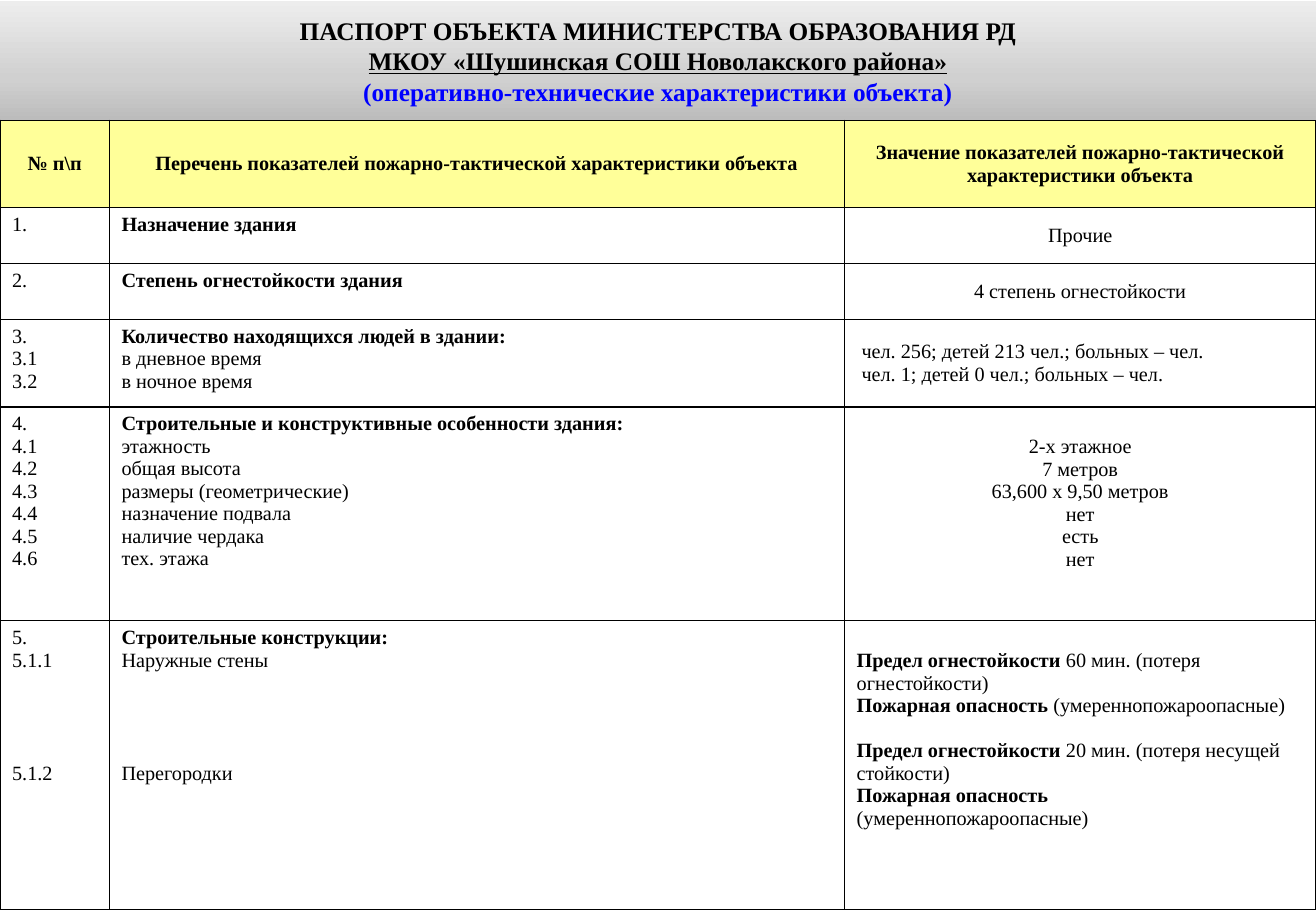
import copy

import pptx
import pptx.dml.color
import pptx.enum.shapes
import pptx.enum.text
import pptx.oxml
import pptx.oxml.ns
import pptx.util
from pptx.util import Inches

COLORS = {
    "black": "000000",
    "white": "FFFFFF",
    "blue": "0000FF",
    "header": "FFFF99",
}
BANNER_STOPS = [(0, "BCBCBC"), (0.35, "D0D0D0"), (1, "EDEDED")]
FONT = "Times New Roman"
LINE = 13.4
COLUMN_WIDTHS = [0.9, 6.05, 3.88]
ROW_HEIGHTS = [0.72, 0.46, 0.46, 0.72, 1.76, 2.38]
CENTER = pptx.enum.text.PP_ALIGN.CENTER
LEFT = pptx.enum.text.PP_ALIGN.LEFT
MIDDLE = pptx.enum.text.MSO_ANCHOR.MIDDLE
TOP = pptx.enum.text.MSO_ANCHOR.TOP

HEADERS = [
    r"*№ п\п*",
    "*Перечень показателей пожарно-тактической характеристики объекта*",
    "*Значение показателей пожарно-тактической характеристики объекта*",
]
NUMBERS = [
    ["1."],
    ["2."],
    ["3.", "3.1", "3.2"],
    ["4.", "4.1", "4.2", "4.3", "4.4", "4.5", "4.6"],
    ["5.", "5.1.1", "5.1.2"],
]
INDICATORS = [
    ["*Назначение здания*"],
    ["*Степень огнестойкости здания*"],
    ["*Количество находящихся людей в здании:*", "в дневное время", "в ночное время"],
    ["*Строительные и конструктивные особенности здания:*", "этажность",
     "общая высота", "размеры (геометрические)", "назначение подвала",
     "наличие чердака", "тех. этажа"],
    ["*Строительные конструкции:*", "Наружные стены", "Перегородки"],
]
VALUES = [
    ["Прочие"],
    ["4 степень огнестойкости"],
    ["чел. 256; детей 213 чел.; больных – чел.",
     "чел. 1; детей 0 чел.; больных – чел."],
    ["2-х этажное", "7 метров", "63,600 х 9,50 метров", "нет", "есть", "нет"],
    ["*Предел огнестойкости* 60 мин. (потеря огнестойкости)",
     "*Пожарная опасность* (умереннопожароопасные)",
     "*Предел огнестойкости* 20 мин. (потеря несущей стойкости)",
     "*Пожарная опасность*",
     "(умереннопожароопасные)"],
]
VALUE_FORMATS = [
    {"align": CENTER, "anchor": MIDDLE},
    {"align": CENTER, "anchor": MIDDLE},
    {"anchor": MIDDLE, "left": 0.14},
    {"align": CENTER, "top": 0.24},
    {"top": 0.24, "gaps": {2: 1}},
]


def rgb(value):
    return pptx.dml.color.RGBColor.from_string(value)


def add_paragraph(frame, text, size=12, color="black", align=LEFT,
                  underline=False, lines_before=0):
    para = frame.paragraphs[0] if not frame.text else frame.add_paragraph()
    para.alignment = align
    if lines_before:
        para.space_before = pptx.util.Pt(lines_before * LINE)
    for index, part in enumerate(text.split("*")):
        if part:
            span = para.add_run()
            span.text = part
            span.font.name = FONT
            span.font.size = pptx.util.Pt(size)
            span.font.bold = index % 2 == 1
            span.font.underline = underline
            span.font.color.rgb = rgb(COLORS[color])


def add_banner(page):
    box = page.shapes.add_shape(pptx.enum.shapes.MSO_SHAPE.RECTANGLE,
                                0, Inches(0.01), Inches(10.83), Inches(0.98))
    box.shadow.inherit = False
    box.line.fill.background()
    box.fill.gradient()
    box.fill.gradient_angle = 90
    stop_list = box.element.spPr.find(".//" + pptx.oxml.ns.qn("a:gsLst"))
    stop_list.append(copy.deepcopy(stop_list[0]))
    for stop, (position, color) in zip(box.fill.gradient_stops, BANNER_STOPS):
        stop.position = position
        stop.color.rgb = rgb(color)
    frame = box.text_frame
    frame.word_wrap = True
    frame.vertical_anchor = MIDDLE
    add_paragraph(frame, "*ПАСПОРТ ОБЪЕКТА МИНИСТЕРСТВА ОБРАЗОВАНИЯ РД*",
                  size=15, align=CENTER)
    add_paragraph(frame, "*МКОУ «Шушинская СОШ Новолакского района»*",
                  size=15, align=CENTER, underline=True)
    add_paragraph(frame, "*(оперативно-технические характеристики объекта)*",
                  size=15, align=CENTER, color="blue")


def set_borders(cell):
    properties = cell._tc.get_or_add_tcPr()
    for side in ("lnL", "lnR", "lnT", "lnB"):
        properties.append(pptx.oxml.parse_xml(
            f'<a:{side} {pptx.oxml.ns.nsdecls("a")} w="12700"><a:solidFill>'
            f'<a:srgbClr val="{COLORS["black"]}"/></a:solidFill></a:{side}>'))


def fill_cell(cell, texts, fill="white", align=LEFT, anchor=TOP,
              left=0.1, top=0.05, gaps=None):
    set_borders(cell)
    cell.fill.solid()
    cell.fill.fore_color.rgb = rgb(COLORS[fill])
    cell.vertical_anchor = anchor
    cell.margin_left = Inches(left)
    cell.margin_top = Inches(top)
    for index, text in enumerate(texts):
        add_paragraph(cell.text_frame, text, align=align,
                      lines_before=(gaps or {}).get(index, 0))


def add_passport_table(page):
    table = page.shapes.add_table(len(ROW_HEIGHTS), len(COLUMN_WIDTHS),
                                  0, Inches(0.99), Inches(10.83), Inches(6.5)).table
    table.first_row = False
    table.horz_banding = False
    for column, width in zip(table.columns, COLUMN_WIDTHS):
        column.width = Inches(width)
    for row, height in zip(table.rows, ROW_HEIGHTS):
        row.height = Inches(height)
    for column, header in enumerate(HEADERS):
        fill_cell(table.cell(0, column), [header], fill="header",
                  align=CENTER, anchor=MIDDLE)
    rows = zip(NUMBERS, INDICATORS, VALUES, VALUE_FORMATS)
    for row, (numbers, indicators, values, value_format) in enumerate(rows, 1):
        gaps = {2: 4} if row == len(NUMBERS) else None
        fill_cell(table.cell(row, 0), numbers, gaps=gaps)
        fill_cell(table.cell(row, 1), indicators, gaps=gaps)
        fill_cell(table.cell(row, 2), values, **value_format)


def main():
    deck = pptx.Presentation()
    deck.slide_width = Inches(10.83)
    deck.slide_height = Inches(7.5)
    page = deck.slides.add_slide(deck.slide_layouts[6])
    add_banner(page)
    add_passport_table(page)
    deck.save("out.pptx")


if __name__ == "__main__":
    main()
